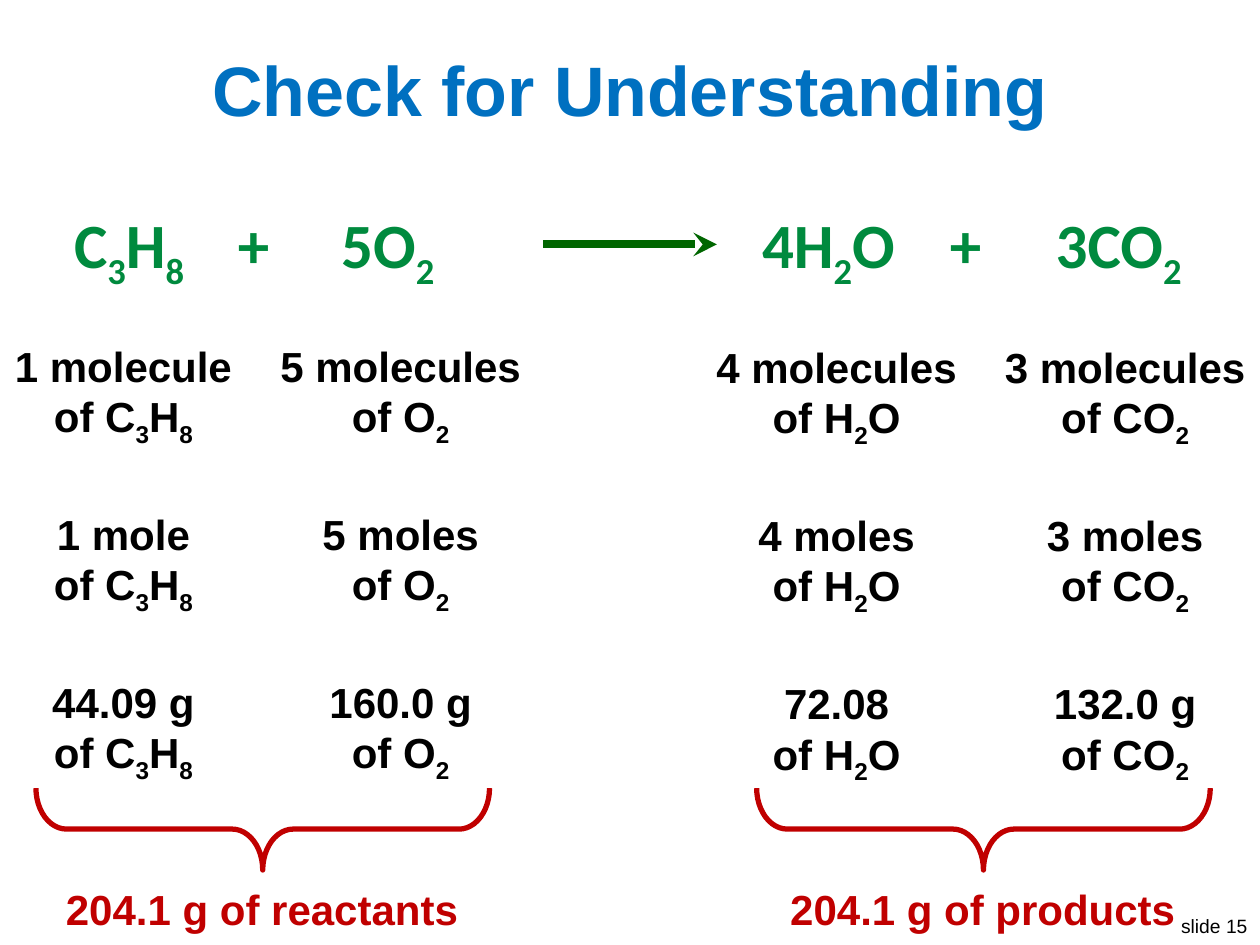
import pptx
import pptx.util
import pptx.dml.color
import pptx.enum.shapes
import pptx.enum.text
import pptx.oxml
import pptx.oxml.ns
import lxml.etree

Inches = pptx.util.Inches
Pt = pptx.util.Pt
Shape = pptx.enum.shapes.MSO_SHAPE
Align = pptx.enum.text.PP_ALIGN
Anchor = pptx.enum.text.MSO_ANCHOR
qn = pptx.oxml.ns.qn

COLORS = {
    "title": "0070C0",
    "term": "008A3E",
    "arrow": "006600",
    "text": "000000",
    "total": "C00000",
}


def paint(name):
    return pptx.dml.color.RGBColor.from_string(COLORS[name])


def write(box, lines, size, color, align=Align.CENTER, face="Arial", bold=True, wrap=False):
    """Add a text box; the character after each underscore is a subscript."""
    frame = slide.shapes.add_textbox(*[Inches(n) for n in box]).text_frame
    frame.word_wrap = wrap
    for i, line in enumerate(lines):
        para = frame.paragraphs[0] if i == 0 else frame.add_paragraph()
        para.alignment = align
        font = para.font
        font.name, font.size, font.bold = face, Pt(size), bold
        font.color.rgb = paint(color)
        head, *rest = line.split("_")
        para.add_run().text = head
        for part in rest:
            sub = para.add_run()
            sub.text = part[0]
            sub._r.get_or_add_rPr().set("baseline", "-25000")
            if part[1:]:
                para.add_run().text = part[1:]
    return frame


deck = pptx.Presentation()
deck.slide_width, deck.slide_height = Inches(10), Inches(7.5)
slide = deck.slides.add_slide(deck.slide_layouts[6])

# Slide number and title
write((9.25, 7.21, 0.75, 0.29), ["slide 15"], 11, "text", Align.RIGHT, bold=False)
title = write((0.2, 0.3, 9.6, 0.8), ["Check for Understanding"], 40, "title", wrap=True)
title.vertical_anchor = Anchor.MIDDLE

# Equation, its terms set on tab stops
terms = ["C_3H_8", "+", "5O_2", "4H_2O", "+", "3CO_2"]
stops = [1.3, 2.12, 5.46, 6.95, 7.79]
sums = write((0.49, 1.58, 9.5, 0.71), ["\t".join(terms)], 36, "term",
             Align.LEFT, "Calibri", wrap=True)
props = sums.paragraphs[0]._p.get_or_add_pPr()
tabs = lxml.etree.Element(qn("a:tabLst"))
for stop in stops:
    lxml.etree.SubElement(tabs, qn("a:tab"), pos=str(Inches(stop)), algn="l")
props.find(qn("a:defRPr")).addprevious(tabs)

# Reaction arrow
arrow = slide.shapes.add_connector(
    pptx.enum.shapes.MSO_CONNECTOR.STRAIGHT,
    Inches(4.31), Inches(1.94), Inches(5.69), Inches(1.94))
arrow.line.color.rgb = paint("arrow")
arrow.line.width = Pt(4.5)
lxml.etree.SubElement(arrow.line._get_or_add_ln(), qn("a:tailEnd"), type="stealth")
lxml.etree.SubElement(arrow._element.spPr, qn("a:effectLst"))

# Amounts: substance, centre, width, top, then one amount a row
columns = [
    ("C_3H_8", 0.98, 1.94, 2.65, ["1 molecule", "1 mole", "44.09 g"]),
    ("O_2", 3.18, 2.13, 2.65, ["5 molecules", "5 moles", "160.0 g"]),
    ("H_2O", 6.64, 2.13, 2.66, ["4 molecules", "4 moles", "72.08"]),
    ("CO_2", 8.93, 2.13, 2.66, ["3 molecules", "3 moles", "132.0 g"]),
]
for name, mid, width, top, amounts in columns:
    for row, amount in enumerate(amounts):
        box = (mid - width / 2, top + row * 1.335, width, 0.91)
        write(box, [amount, f"of {name}"], 24, "text")

# Braces and totals
for left, mid, side in [(1.76, 2.08, "reactants"), (7.48, 7.8, "products")]:
    brace = slide.shapes.add_shape(
        Shape.RIGHT_BRACE, Inches(left), Inches(4.78), Inches(0.65), Inches(3.6))
    brace.rotation = 90
    brace.adjustments[0] = 0.373
    brace.adjustments[1] = 0.5
    brace.shadow.inherit = False
    brace.fill.background()
    brace.line.color.rgb = paint("total")
    brace.line.width = Pt(3)
    write((mid - 1.67, 6.96, 3.34, 0.5), [f"204.1 g of {side}"], 24, "total")

deck.save("out.pptx")
